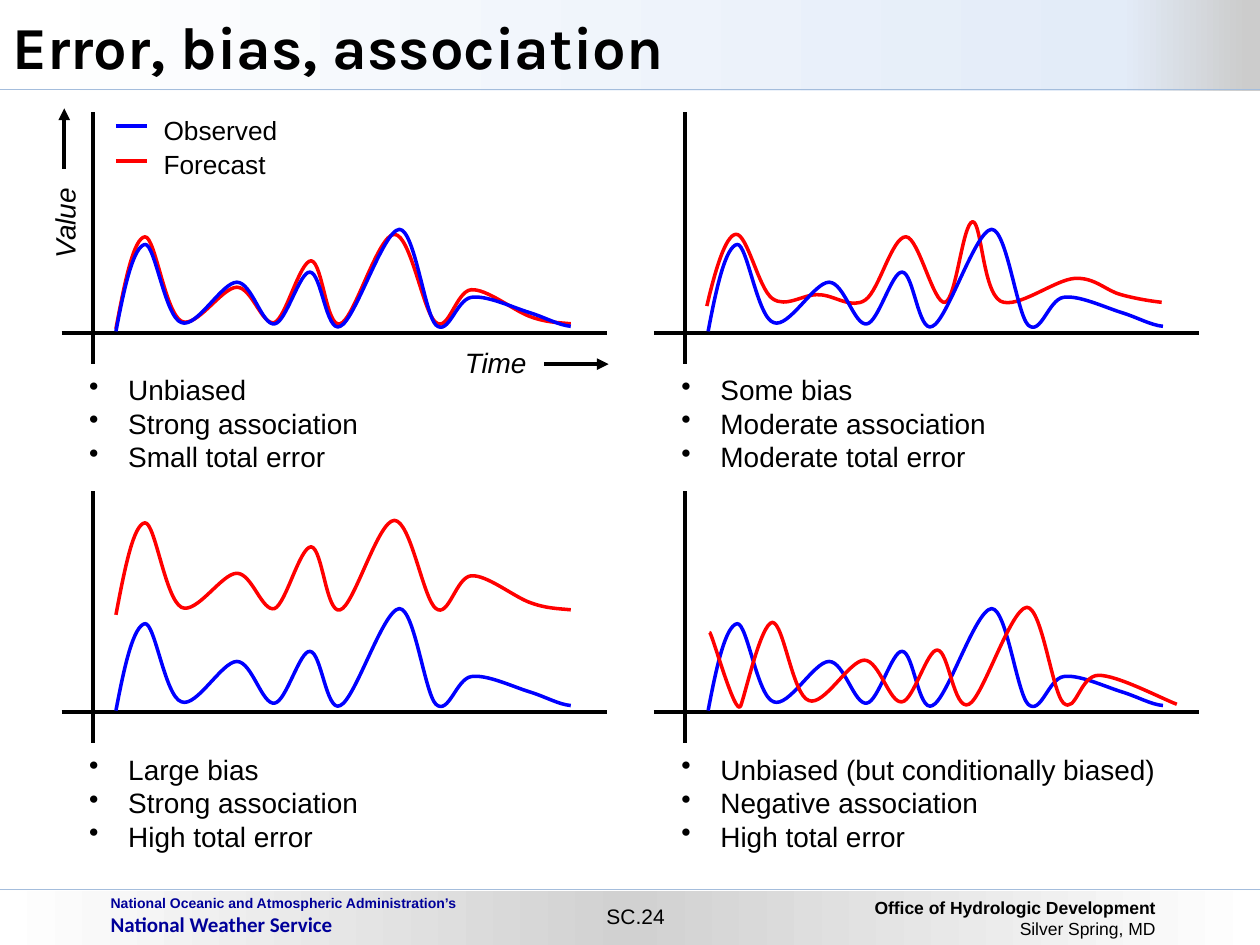
from copy import deepcopy
from dataclasses import dataclass

from lxml.etree import SubElement
from pptx import Presentation
from pptx.dml.color import RGBColor
from pptx.enum.shapes import MSO_CONNECTOR, MSO_SHAPE
from pptx.enum.text import MSO_ANCHOR, MSO_AUTO_SIZE, PP_ALIGN
from pptx.oxml.ns import qn
from pptx.util import Inches, Pt

BLACK = RGBColor(0x00, 0x00, 0x00)
WHITE = RGBColor(0xFF, 0xFF, 0xFF)
RED = RGBColor(0xFF, 0x00, 0x00)
BLUE = RGBColor(0x00, 0x00, 0xFF)
NAVY = RGBColor(0x00, 0x00, 0x99)
RULE_BLUE = RGBColor(0xA4, 0xBD, 0xDC)
PALE_BLUE = RGBColor(0xE3, 0xEC, 0xF8)
HEADER_GREY = RGBColor(0xCC, 0xCC, 0xCC)
FOOTER_GREY = RGBColor(0xD1, 0xD1, 0xD1)

COLUMN_PITCH, ROW_PITCH = 4.7, 3.01
BULLET_INDENT = Inches(0.31)

# Curves in the coordinates of the top left panel:
# a start point, then two control points and an end point per segment.
OBSERVED = (
    (0.92, 2.63), (0.99, 2.26), (1.06, 1.96), (1.15, 1.94), (1.23, 1.93), (1.31, 2.52), (1.44, 2.56),
    (1.56, 2.61), (1.76, 2.24), (1.88, 2.24), (2, 2.24), (2.08, 2.59), (2.18, 2.57),
    (2.27, 2.56), (2.38, 2.15), (2.46, 2.16), (2.55, 2.16), (2.59, 2.65), (2.7, 2.59),
    (2.82, 2.54), (3.04, 1.83), (3.17, 1.82), (3.29, 1.82), (3.37, 2.49), (3.46, 2.58),
    (3.56, 2.67), (3.62, 2.38), (3.74, 2.36), (3.86, 2.34), (4.07, 2.44), (4.2, 2.48),
    (4.33, 2.52), (4.43, 2.58), (4.53, 2.59),
)
CLOSE_FORECAST = (
    (0.92, 2.61), (0.99, 2.24), (1.06, 1.89), (1.15, 1.88), (1.23, 1.87), (1.31, 2.48), (1.44, 2.55),
    (1.56, 2.61), (1.76, 2.28), (1.88, 2.28), (2, 2.28), (2.08, 2.59), (2.18, 2.56),
    (2.27, 2.52), (2.38, 2.07), (2.47, 2.07), (2.56, 2.08), (2.59, 2.61), (2.7, 2.57),
    (2.81, 2.54), (3, 1.86), (3.13, 1.86), (3.26, 1.86), (3.36, 2.49), (3.46, 2.56),
    (3.56, 2.64), (3.62, 2.31), (3.74, 2.3), (3.86, 2.29), (4.07, 2.46), (4.2, 2.51),
    (4.33, 2.56), (4.43, 2.56), (4.53, 2.57),
)
HIGH_FORECAST = tuple((x, y - 0.74) for x, y in CLOSE_FORECAST)
MODERATE_FORECAST = (
    (0.91, 2.43), (0.98, 2.13), (1.06, 1.87), (1.14, 1.86), (1.23, 1.85), (1.32, 2.29), (1.43, 2.37),
    (1.54, 2.45), (1.68, 2.33), (1.8, 2.34), (1.92, 2.34), (2.06, 2.46), (2.17, 2.38),
    (2.28, 2.3), (2.38, 1.88), (2.49, 1.88), (2.59, 1.88), (2.71, 2.42), (2.8, 2.4),
    (2.89, 2.38), (2.94, 1.77), (3.02, 1.76), (3.09, 1.76), (3.1, 2.31), (3.24, 2.39),
    (3.37, 2.46), (3.67, 2.22), (3.83, 2.21), (3.99, 2.2), (4.08, 2.31), (4.2, 2.34),
    (4.31, 2.37), (4.43, 2.39), (4.52, 2.4),
)
LAGGED_FORECAST = (
    (0.93, 2.01), (0.94, 1.97), (1.14, 2.71), (1.18, 2.59), (1.22, 2.48), (1.34, 1.94), (1.43, 1.93),
    (1.52, 1.93), (1.59, 2.51), (1.72, 2.55), (1.84, 2.6), (2.04, 2.23), (2.16, 2.23),
    (2.28, 2.23), (2.36, 2.58), (2.46, 2.56), (2.55, 2.55), (2.66, 2.14), (2.74, 2.15),
    (2.83, 2.15), (2.87, 2.64), (2.99, 2.58), (3.1, 2.53), (3.32, 1.82), (3.45, 1.81),
    (3.57, 1.81), (3.65, 2.48), (3.74, 2.57), (3.84, 2.66), (3.87, 2.35), (4.02, 2.35),
    (4.17, 2.35), (4.51, 2.53), (4.64, 2.58),
)


@dataclass(frozen=True)
class Panel:
    column: int
    row: int
    curves: tuple  # (points, colour), from back to front
    traits: tuple
    traits_width: float


@dataclass(frozen=True)
class Label:
    box: tuple
    lines: tuple  # (text, font format) per paragraph
    color: RGBColor = BLACK
    align: PP_ALIGN = PP_ALIGN.LEFT
    wrap: bool = False
    fit: bool = True
    bulleted: bool = False
    spacing: float = 1.0
    rotation: int = 0
    anchor: MSO_ANCHOR = MSO_ANCHOR.TOP
    left_inset: float = 0.1
    right_inset: float = 0.1


def style(size: float, name: str = "Arial", bold: bool = False, italic: bool = False) -> dict:
    return {"size": Pt(size), "name": name, "bold": bold, "italic": italic}


PANELS = (
    Panel(0, 0, ((CLOSE_FORECAST, RED), (OBSERVED, BLUE)),
          ("Unbiased", "Strong association", "Small total error"), 2.36),
    Panel(0, 1, ((HIGH_FORECAST, RED), (OBSERVED, BLUE)),
          ("Large bias", "Strong association", "High total error"), 2.36),
    Panel(1, 0, ((MODERATE_FORECAST, RED), (OBSERVED, BLUE)),
          ("Some bias", "Moderate association", "Moderate total error"), 2.65),
    Panel(1, 1, ((OBSERVED, BLUE), (LAGGED_FORECAST, RED)),
          ("Unbiased (but conditionally biased)", "Negative association", "High total error"), 4.1),
)
LABELS = (
    Label((6.89, 7.07, 2.33, 0.44),
          (("Office of Hydrologic Development", style(10, bold=True)), ("Silver Spring, MD", style(10))),
          align=PP_ALIGN.RIGHT, wrap=True, fit=False, left_inset=0.01, right_inset=0.05),
    Label((0.78, 7.05, 3.33, 0.43),
          (("National Oceanic and Atmospheric Administration’s", style(8, bold=True)),
           ("National Weather Service", style(12, "Calibri", bold=True))), color=NAVY, wrap=True),
    Label((4.7, 7.12, 0.69, 0.3), (("SC.24", style(12)),), align=PP_ALIGN.CENTER),
    Label((0, 0, 10, 0.72), (("Error, bias, association", style(34, "Karla", bold=True)),),
          fit=False, anchor=MSO_ANCHOR.MIDDLE),
    Label((1.2, 0.83, 1.17, 0.63), (("Observed", style(15)), ("Forecast", style(15))), spacing=1.1),
    Label((3.59, 2.69, 0.69, 0.37), (("Time", style(16, italic=True)),)),
    Label((0.13, 1.58, 0.77, 0.37), (("Value", style(16, italic=True)),), rotation=270),
)


def draw_line(slide, start: tuple, end: tuple, color=BLACK, width: float = 2.25, arrow: bool = False) -> None:
    line = slide.shapes.add_connector(MSO_CONNECTOR.STRAIGHT, *map(Inches, start + end))
    line.line.color.rgb = color
    line.line.width = Pt(width)
    if arrow:
        SubElement(line.line._get_or_add_ln(), qn("a:tailEnd"), type="triangle")
    SubElement(line._element.spPr, qn("a:effectLst"))


def draw_band(slide, top: float, height: float, stops: tuple) -> None:
    """Draw a full-width bar with a left to right gradient of (position, colour) stops."""
    band = slide.shapes.add_shape(MSO_SHAPE.RECTANGLE, 0, Inches(top), Inches(10), Inches(height))
    band.shadow.inherit = False
    band.line.fill.background()
    band.fill.gradient()
    band.fill.gradient_angle = 0
    stop_list = band._element.spPr.find(".//" + qn("a:gsLst"))
    stop_list.append(deepcopy(stop_list[-1]))
    for stop, (position, color) in zip(band.fill.gradient_stops, stops):
        stop.position = position
        stop.color.rgb = color


def draw_label(slide, label: Label) -> None:
    box = slide.shapes.add_textbox(*map(Inches, label.box))
    box.rotation = label.rotation
    frame = box.text_frame
    frame_format = {
        "word_wrap": label.wrap,
        "auto_size": MSO_AUTO_SIZE.SHAPE_TO_FIT_TEXT if label.fit else MSO_AUTO_SIZE.NONE,
        "vertical_anchor": label.anchor,
        "margin_left": Inches(label.left_inset),
        "margin_right": Inches(label.right_inset),
    }
    for attribute, value in frame_format.items():
        setattr(frame, attribute, value)
    for index, (text, font_format) in enumerate(label.lines):
        paragraph = frame.add_paragraph() if index else frame.paragraphs[0]
        paragraph.alignment = label.align
        paragraph.line_spacing = label.spacing
        if label.bulleted:
            properties = paragraph._p.get_or_add_pPr()
            properties.set("marL", str(BULLET_INDENT))
            properties.set("indent", str(-BULLET_INDENT))
            SubElement(properties, qn("a:buChar"), char="•")
        run = paragraph.add_run()
        run.text = text
        run.font.color.rgb = label.color
        for attribute, value in font_format.items():
            setattr(run.font, attribute, value)


def draw_curve(slide, points: list, color: RGBColor) -> None:
    """Draw an open outline whose points after the first form cubic segments of three."""
    start, *rest = [(Inches(x), Inches(y)) for x, y in points]
    builder = slide.shapes.build_freeform(*start)
    builder.add_line_segments(rest, close=False)
    curve = builder.convert_to_shape()
    curve.shadow.inherit = False
    curve.fill.background()
    curve.line.color.rgb = color
    curve.line.width = Pt(2)
    outline = curve._element.spPr.find(".//" + qn("a:path"))
    steps = outline.findall(qn("a:lnTo"))
    for first in range(0, len(steps), 3):
        segment = SubElement(outline, qn("a:cubicBezTo"))
        for step in steps[first:first + 3]:
            segment.append(step[0])
            outline.remove(step)


def draw_panel(slide, panel: Panel) -> None:
    dx, dy = panel.column * COLUMN_PITCH, panel.row * ROW_PITCH
    draw_line(slide, (0.74 + dx, 0.89 + dy), (0.74 + dx, 2.89 + dy))
    draw_line(slide, (0.49 + dx, 2.64 + dy), (4.82 + dx, 2.64 + dy))
    draw_label(slide, Label((0.61 + dx, 2.91 + dy, panel.traits_width, 0.91),
                            tuple((trait, style(16)) for trait in panel.traits), bulleted=True))
    for points, color in panel.curves:
        draw_curve(slide, [(x + dx, y + dy) for x, y in points], color)


def main() -> None:
    deck = Presentation()
    deck.slide_width, deck.slide_height = Inches(10), Inches(7.5)
    slide = deck.slides.add_slide(deck.slide_layouts[6])

    draw_band(slide, 7.07, 0.44, ((0, WHITE), (0.5, FOOTER_GREY), (1, WHITE)))
    draw_band(slide, 0, 0.72, ((0, WHITE), (0.89, PALE_BLUE), (0.99, HEADER_GREY)))
    for y in (7.06, 0.71):
        draw_line(slide, (10, y), (0, y), RULE_BLUE, 0.75)
    for panel in PANELS:
        draw_panel(slide, panel)
    for y, color in ((1, BLUE), (1.28, RED)):
        draw_line(slide, (0.92, y), (1.17, y), color)
    for label in LABELS:
        draw_label(slide, label)
    draw_line(slide, (4.32, 2.89), (4.83, 2.89), arrow=True)
    draw_line(slide, (0.51, 1.34), (0.51, 0.86), arrow=True)
    deck.save("out.pptx")


if __name__ == "__main__":
    main()
